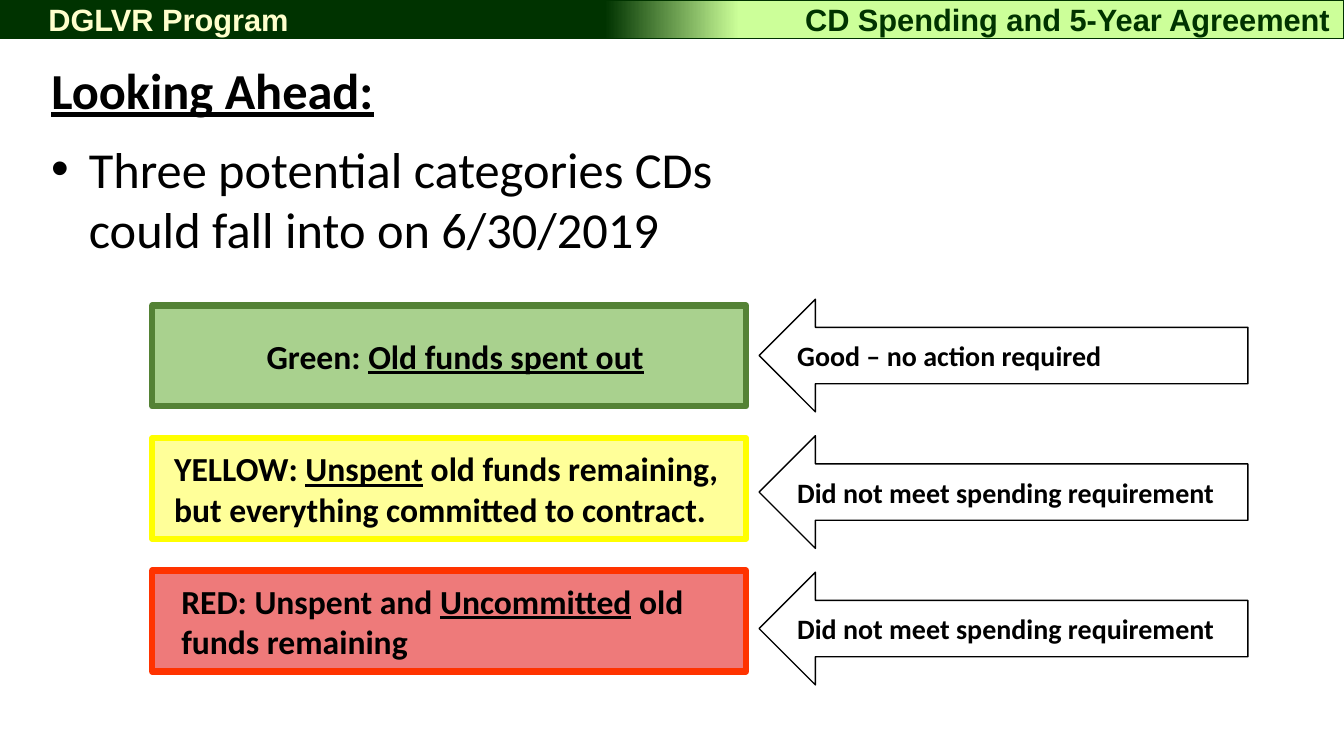
from dataclasses import dataclass

from lxml import etree
from pptx import Presentation
from pptx import util as u
from pptx.dml.color import RGBColor
from pptx.enum import shapes, text
from pptx.oxml import ns

Cm, Pt = u.Cm, u.Pt


@dataclass(frozen=True)
class Theme:
    heading_font: str = "Arial"
    body_font: str = "Calibri"
    black: str = "000000"
    dark_green: str = "003300"
    light_green: str = "CCFF99"
    cream: str = "FFFFCC"
    header_size: int = 22
    title_size: int = 36
    category_size: int = 24
    outcome_size: int = 20


THEME = Theme()

CATEGORIES = [
    (["Green: ", "Old funds spent out"], "A9D18E", "548235", 0.3,
     text.PP_ALIGN.CENTER, "Good – no action required"),
    (["YELLOW: ", "Unspent", " old funds remaining, but everything committed to contract."],
     "FFFF99", "FFFF00", 0.3, text.PP_ALIGN.LEFT, "Did not meet spending requirement"),
    (["RED: Unspent and ", "Uncommitted", " old funds remaining"],
     "EE7A7A", "FF3300", 0.48, text.PP_ALIGN.LEFT, "Did not meet spending requirement"),
]


def rgb(code):
    return RGBColor.from_string(code)


def style_span(span, size, color=THEME.black, name=THEME.body_font, bold=True, underline=False):
    font = span.font
    font.name, font.size, font.bold, font.underline = name, Pt(size), bold, underline
    font.color.rgb = rgb(color)


def set_indent(para, left, first=0):
    properties = para._p.get_or_add_pPr()
    properties.set("marL", str(Cm(left)))
    properties.set("indent", str(Cm(first)))
    return properties


def add_outlined_shape(page, kind, left, top, width, height, line_color, line_width):
    shape = page.shapes.add_shape(kind, Cm(left), Cm(top), Cm(width), Cm(height))
    shape.shadow.inherit = False
    shape.line.color.rgb = rgb(line_color)
    shape.line.width = Pt(line_width)
    return shape


def add_header_band(page):
    band = add_outlined_shape(page, shapes.MSO_SHAPE.RECTANGLE, 0, 0, 33.87, 0.97,
                              THEME.dark_green, 1)
    band.fill.gradient()
    band.fill.gradient_angle = 0
    stops = [(0.45, THEME.dark_green), (0.55, THEME.light_green)]
    for stop, (position, color) in zip(band.fill.gradient_stops, stops):
        stop.position = position
        stop.color.rgb = rgb(color)


def add_text_box(page, left, top, width, height, words):
    box = page.shapes.add_textbox(Cm(left), Cm(top), Cm(width), Cm(height))
    box.text_frame.word_wrap = True
    box.text_frame.text = words
    return box


def add_header_label(page, left, width, words, color):
    frame = add_text_box(page, left, 0, width, 0.95, words).text_frame
    frame.margin_top = frame.margin_bottom = frame.margin_right = 0
    frame.vertical_anchor = text.MSO_ANCHOR.MIDDLE
    style_span(frame.paragraphs[0].runs[0], THEME.header_size, color, THEME.heading_font)


def format_title(title, words):
    title.left, title.top, title.width, title.height = Cm(1.04), Cm(1.37), Cm(17.75), Cm(1.81)
    frame = title.text_frame
    frame.text = words
    frame.vertical_anchor = text.MSO_ANCHOR.TOP
    frame.auto_size = text.MSO_AUTO_SIZE.NONE
    para = frame.paragraphs[0]
    para.alignment = text.PP_ALIGN.LEFT
    style_span(para.runs[0], THEME.title_size, underline=True)


def add_bullet_box(page, words):
    para = add_text_box(page, 1.04, 3.35, 17.75, 4.3, words).text_frame.paragraphs[0]
    properties = set_indent(para, 0.95, -0.95)
    etree.SubElement(properties, ns.qn("a:buFont"), typeface=THEME.heading_font)
    etree.SubElement(properties, ns.qn("a:buChar"), char="•")
    style_span(para.runs[0], THEME.title_size, bold=False)


def add_category(page, top, parts, fill, line, indent, alignment):
    box = add_outlined_shape(page, shapes.MSO_SHAPE.RECTANGLE, 3.84, top, 14.96, 2.54, line, 4.5)
    box.fill.solid()
    box.fill.fore_color.rgb = rgb(fill)
    box.text_frame.vertical_anchor = text.MSO_ANCHOR.MIDDLE
    para = box.text_frame.paragraphs[0]
    para.alignment = alignment
    set_indent(para, indent)
    for index, part in enumerate(parts):
        span = para.add_run()
        span.text = part
        style_span(span, THEME.category_size, underline=index == 1)


def add_outcome_arrow(page, top, words):
    arrow = add_outlined_shape(page, shapes.MSO_SHAPE.LEFT_ARROW, 19.13, top, 12.32, 2.84,
                               THEME.black, 1)
    arrow.fill.background()
    arrow.text_frame.text = words
    arrow.text_frame.vertical_anchor = text.MSO_ANCHOR.MIDDLE
    para = arrow.text_frame.paragraphs[0]
    para.alignment = text.PP_ALIGN.LEFT
    style_span(para.runs[0], THEME.outcome_size)


def main():
    deck = Presentation()
    deck.slide_width, deck.slide_height = Cm(33.87), Cm(19.05)
    page = deck.slides.add_slide(deck.slide_layouts[5])
    add_header_band(page)
    add_header_label(page, 0.97, 15.34, "DGLVR Program", THEME.cream)
    add_header_label(page, 20.04, 13.8, "CD Spending and 5-Year Agreement", THEME.dark_green)
    format_title(page.shapes.title, "Looking Ahead:")
    add_bullet_box(page, "Three potential categories CDs could fall into on 6/30/2019")
    for row, (parts, fill, line, indent, alignment, outcome) in enumerate(CATEGORIES):
        add_category(page, 7.7 + 3.34 * row, parts, fill, line, indent, alignment)
        add_outcome_arrow(page, 7.54 + 3.44 * row, outcome)
    deck.save("out.pptx")


if __name__ == "__main__":
    main()
